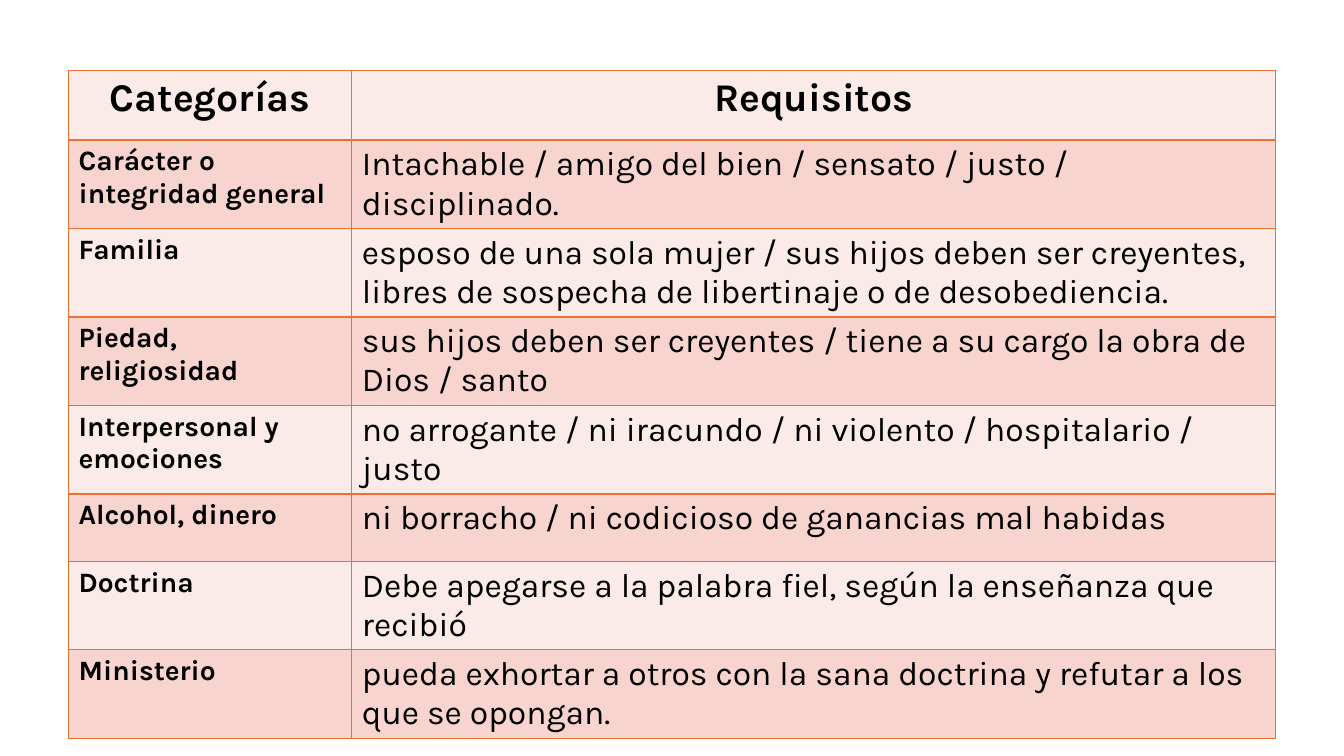
"""Build a slide with a table of categories and their requirements."""
import lxml.etree
import pptx
import pptx.dml.color
import pptx.enum.text
import pptx.oxml.ns
import pptx.util

PX = 9144
FONT = "Karla"
COLORS = {"text": "000000", "border": "E97132", "light": "FBEBE8", "dark": "F7D5CE"}
COLUMN_WIDTHS = (281, 916)
HEADER_HEIGHT, ROW_HEIGHT = 69, 67
HEADERS = ("Categorías", "Requisitos")
REQUIREMENTS = [
    ("Carácter o integridad general",
     "Intachable / amigo del bien / sensato / justo / disciplinado."),
    ("Familia",
     "esposo de una sola mujer / sus hijos deben ser creyentes, "
     "libres de sospecha de libertinaje o de desobediencia."),
    ("Piedad, religiosidad",
     "sus hijos deben ser creyentes / tiene a su cargo la obra de Dios / santo"),
    ("Interpersonal y emociones",
     "no arrogante / ni iracundo / ni violento / hospitalario / justo"),
    ("Alcohol, dinero", "ni borracho / ni codicioso de ganancias mal habidas"),
    ("Doctrina", "Debe apegarse a la palabra fiel, según la enseñanza que recibió"),
    ("Ministerio",
     "pueda exhortar a otros con la sana doctrina y refutar a los que se opongan."),
]


def px(n):
    return pptx.util.Emu(n * PX)


def rgb(name):
    return pptx.dml.color.RGBColor.from_string(COLORS[name])


def write_text(tf, text, size, bold=False, align="LEFT", color="text"):
    p = tf.paragraphs[0]
    p.alignment = getattr(pptx.enum.text.PP_ALIGN, align)
    r = p.add_run()
    r.text = text
    r.font.name = FONT
    r.font.size = pptx.util.Pt(size)
    r.font.bold = bold
    r.font.color.rgb = rgb(color)


def set_borders(cell, color, width=1):
    qn = pptx.oxml.ns.qn
    tc_pr = cell._tc.get_or_add_tcPr()
    for side in ("lnL", "lnR", "lnT", "lnB"):
        ln = lxml.etree.SubElement(tc_pr, qn(f"a:{side}"), w=str(pptx.util.Pt(width)))
        fill = lxml.etree.SubElement(ln, qn("a:solidFill"))
        lxml.etree.SubElement(fill, qn("a:srgbClr"), val=COLORS[color])


def format_cell(cell, fill):
    set_borders(cell, "border")
    cell.fill.solid()
    cell.fill.fore_color.rgb = rgb(fill)


def add_requirements_table(slide, left, top):
    rows = [HEADERS, *REQUIREMENTS]
    height = HEADER_HEIGHT + ROW_HEIGHT * len(REQUIREMENTS)
    table = slide.shapes.add_table(
        len(rows), len(HEADERS), px(left), px(top), px(sum(COLUMN_WIDTHS)), px(height)
    ).table
    for column, width in zip(table.columns, COLUMN_WIDTHS):
        column.width = px(width)
    for i, texts in enumerate(rows):
        table.rows[i].height = px(ROW_HEIGHT if i else HEADER_HEIGHT)
        for j, text in enumerate(texts):
            cell = table.cell(i, j)
            format_cell(cell, "dark" if i % 2 else "light")
            if i == 0:
                write_text(cell.text_frame, text, 28, bold=True, align="CENTER")
            else:
                write_text(cell.text_frame, text, 24 if j else 20, bold=j == 0)


def main():
    prs = pptx.Presentation()
    prs.slide_width, prs.slide_height = px(1333), px(750)
    slide = prs.slides.add_slide(prs.slide_layouts[6])
    add_requirements_table(slide, 68, 70)
    prs.save("out.pptx")


if __name__ == "__main__":
    main()
